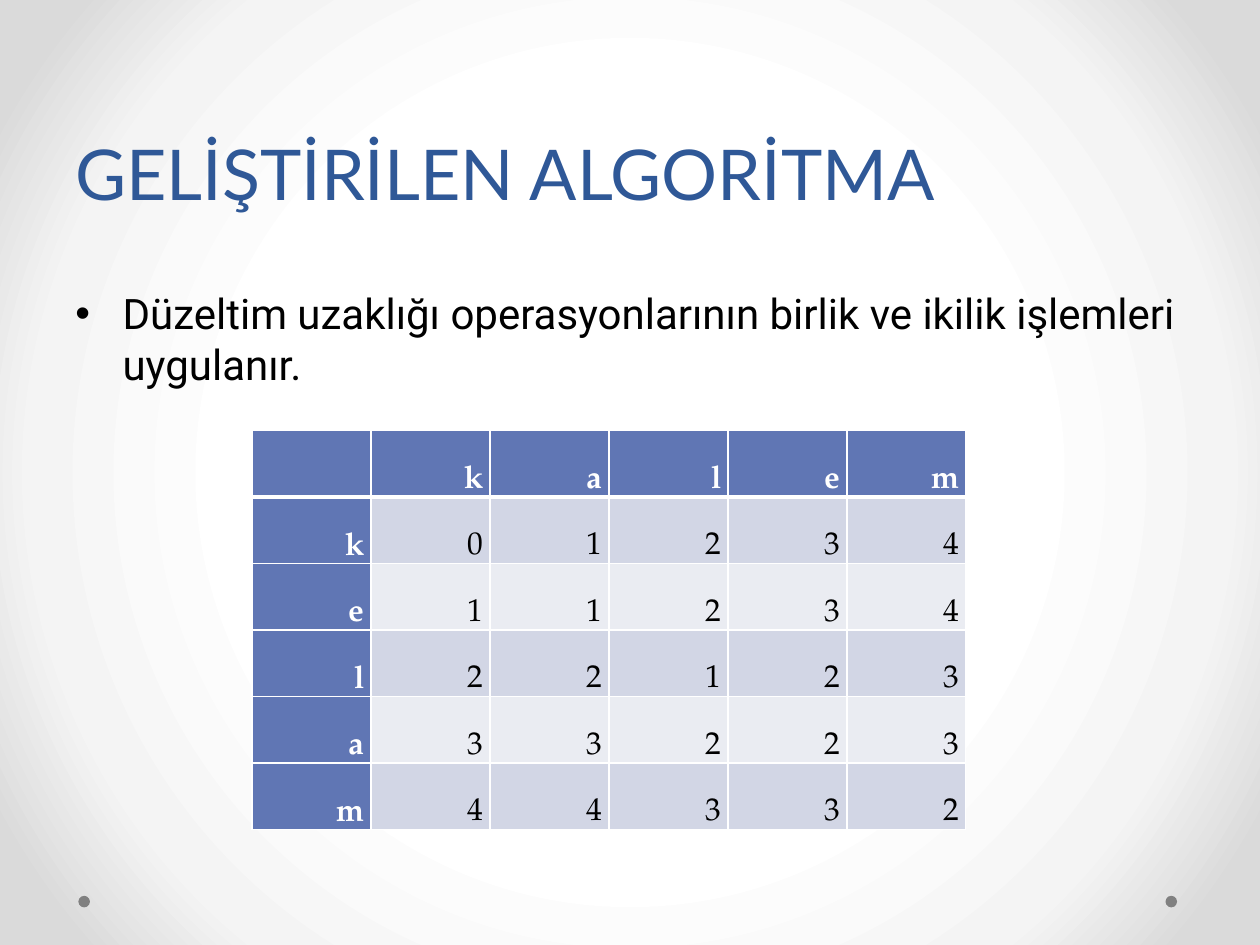
from lxml import etree
from pptx import Presentation
from pptx.dml.color import RGBColor
from pptx.enum import shapes, text
from pptx.oxml import parse_xml
from pptx.oxml.ns import nsdecls, qn
from pptx.util import Pt

COLORS = {
    "title": "2F5897", "body": "000000", "white": "FFFFFF", "header": "6076B4",
    "band": "D2D6E5", "light": "EAECF2", "dot": "808080",
}
BACKGROUND = [(50, "FFFFFF"), (76, "F4F4F4"), (92, "DADADA")]
TITLE = {"size": Pt(40), "name": "Lato"}
BODY = {"size": Pt(24), "name": "Roboto"}
CELL = {"size": Pt(18), "name": "TeX Gyre Pagella"}
COLUMNS = "kalem"
DISTANCES = {"k": "01234", "e": "11234", "l": "22123", "a": "33223", "m": "44332"}


def set_attrs(target, values):
    for name, value in values.items():
        setattr(target, name, value)


def add_run(p, words, font, color, bold=False):
    r = p.add_run()
    r.text = words
    set_attrs(r.font, {**font, "bold": bold})
    r.font.color.rgb = RGBColor.from_string(COLORS[color])


def add_background(s):
    s.background.fill.gradient()
    grad = s._element.find(".//" + qn("a:gradFill"))
    stops = "".join(
        f'<a:gs pos="{pos * 1000}"><a:srgbClr val="{color}"/></a:gs>'
        for pos, color in BACKGROUND)
    grad.getparent().replace(grad, parse_xml(
        f'<a:gradFill {nsdecls("a")} rotWithShape="1"><a:gsLst>{stops}</a:gsLst>'
        '<a:path path="circle"><a:fillToRect l="50000" t="50000" r="50000" b="50000"/>'
        '</a:path></a:gradFill>'))


def add_dot(s, box):
    sp = s.shapes.add_shape(shapes.MSO_SHAPE.OVAL, *map(Pt, box))
    sp.shadow.inherit = False
    sp.fill.solid()
    sp.fill.fore_color.rgb = RGBColor.from_string(COLORS["dot"])
    sp.line.fill.background()


def add_title(s, box, words):
    tf = s.shapes.add_textbox(*map(Pt, box)).text_frame
    set_attrs(tf, {"word_wrap": True, "vertical_anchor": text.MSO_ANCHOR.BOTTOM})
    p = tf.paragraphs[0]
    p.line_spacing = Pt(58)
    add_run(p, words, TITLE, "title")


def add_body(s, box, words):
    tf = s.shapes.add_textbox(*map(Pt, box)).text_frame
    set_attrs(tf, {"word_wrap": True, "margin_top": Pt(38.5)})
    p = tf.paragraphs[0]
    add_run(p, words, BODY, "body")
    pPr = p._p.get_or_add_pPr()
    pPr.set("marL", str(Pt(27)))
    pPr.set("indent", str(Pt(-27)))
    etree.SubElement(pPr, qn("a:buFont")).set("typeface", "Arial")
    etree.SubElement(pPr, qn("a:buChar")).set("char", "•")


def add_borders(cell, widths):
    tcPr = cell._tc.get_or_add_tcPr()
    for i, (side, width) in enumerate(widths.items()):
        tcPr.insert(i, parse_xml(
            f'<a:ln{side} {nsdecls("a")} w="{Pt(width)}"><a:solidFill>'
            f'<a:srgbClr val="{COLORS["white"]}"/></a:solidFill></a:ln{side}>'))


def add_distance_table(s, box):
    grid = [["", *COLUMNS]] + [[letter, *row] for letter, row in DISTANCES.items()]
    rows, cols = len(grid), len(grid[0])
    table = s.shapes.add_table(rows, cols, *map(Pt, box)).table
    table.horz_banding = False
    for column in table.columns:
        column.width = Pt(box[2] / cols)
    for i, row in enumerate(grid):
        table.rows[i].height = Pt(box[3] / rows)
        for j, words in enumerate(row):
            cell = table.cell(i, j)
            heading = i == 0 or j == 0
            fill = "header" if heading else "band" if i % 2 else "light"
            set_attrs(cell, {
                "vertical_anchor": text.MSO_ANCHOR.BOTTOM,
                "margin_left": Pt(3.6), "margin_right": Pt(3.6),
                "margin_top": 0, "margin_bottom": 0})
            cell.fill.solid()
            cell.fill.fore_color.rgb = RGBColor.from_string(COLORS[fill])
            add_borders(cell, {"L": 1, "R": 1, "T": 3 if i == 1 else 1,
                               "B": 3 if i == 0 else 1})
            if words:
                p = cell.text_frame.paragraphs[0]
                set_attrs(p, {"alignment": text.PP_ALIGN.RIGHT, "line_spacing": 1.15})
                add_run(p, words, CELL, "white" if heading else "body", heading)


def main():
    prs = Presentation()
    set_attrs(prs, {"slide_width": Pt(720), "slide_height": Pt(540)})
    s = prs.slides.add_slide(prs.slide_layouts[6])
    add_background(s)
    for left in (666, 44.8):
        add_dot(s, (left, 511.9, 6.6, 6.6))
    add_title(s, (36, 0, 648, 126), "GELİŞTİRİLEN ALGORİTMA")
    add_body(s, (36, 126, 648, 356.4),
             "Düzeltim uzaklığı operasyonlarının birlik ve ikilik işlemleri uygulanır.")
    add_distance_table(s, (144, 246, 408, 228))
    prs.save("out.pptx")


if __name__ == "__main__":
    main()
